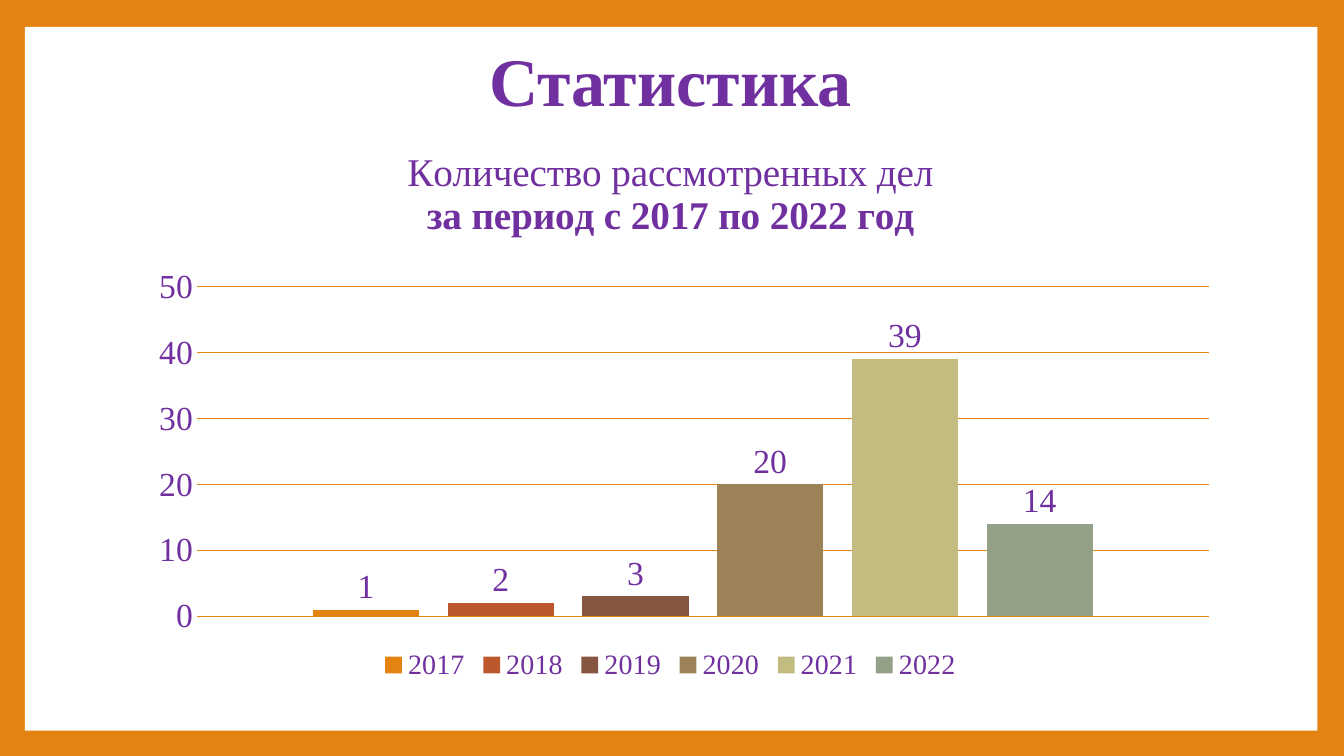
from lxml import etree
from pptx import Presentation
from pptx.chart.data import CategoryChartData
from pptx.dml.color import RGBColor
from pptx.enum import chart as charts, shapes, text
from pptx.oxml import ns
from pptx.util import Cm, Pt

HEADING = "Статистика"
CHART_TITLE = [("Количество рассмотренных дел", False),
               ("за период с 2017 по 2022 год", True)]
CASES = [("2017", 1, "E48312"), ("2018", 2, "BD582C"), ("2019", 3, "865640"),
         ("2020", 20, "9B8357"), ("2021", 39, "C2BC80"), ("2022", 14, "94A088")]

FONT, PURPLE, ORANGE, WHITE = "Times New Roman", "7030A0", "E48312", "FFFFFF"

# left, top, width, height in centimetres
PANEL_AREA = (0.63, 0.68, 32.57, 17.73)
HEADING_AREA = (3.18, 1.22, 27.43, 1.8)
CHART_AREA = (3.18, 3.28, 27.43, 14.02)
PLOT_AREA = (1.78, 3.95, 25.51, 8.3)  # measured inside the chart


def lengths(area):
    return [Cm(value) for value in area]


def paint(colour_format, colour):
    colour_format.rgb = RGBColor.from_string(colour)


def fill_solid(fill, colour):
    fill.solid()
    paint(fill.fore_color, colour)


def set_font(font, size, bold=False):
    font.name, font.size, font.bold = FONT, Pt(size), bold
    paint(font.color, PURPLE)


def place_plot(chart):
    """Fix the inner plot area as fractions of the chart's size."""
    plot_area = chart.element.find(".//" + ns.qn("c:plotArea"))
    for old in plot_area.findall(ns.qn("c:layout")):
        plot_area.remove(old)
    layout = etree.Element(ns.qn("c:layout"))
    plot_area.insert(0, layout)
    manual = etree.SubElement(layout, ns.qn("c:manualLayout"))
    width, height = CHART_AREA[2:]
    left, top, plot_width, plot_height = PLOT_AREA
    settings = [("layoutTarget", "inner"), ("xMode", "edge"), ("yMode", "edge"),
                ("x", left / width), ("y", top / height),
                ("w", plot_width / width), ("h", plot_height / height)]
    for tag, value in settings:
        etree.SubElement(manual, ns.qn("c:" + tag)).set("val", str(value))


def add_heading(page):
    box = page.shapes.add_textbox(*lengths(HEADING_AREA))
    frame = box.text_frame
    frame.word_wrap = True
    frame.vertical_anchor = text.MSO_ANCHOR.MIDDLE
    para = frame.paragraphs[0]
    para.text = HEADING
    para.alignment = text.PP_ALIGN.CENTER
    para.line_spacing = 0.9
    set_font(para.font, 48.6, bold=True)


def add_case_chart(page):
    data = CategoryChartData()
    data.categories = ["1"]
    for year, count, _ in CASES:
        data.add_series(year, [count])
    chart = page.shapes.add_chart(charts.XL_CHART_TYPE.COLUMN_CLUSTERED,
                                  *lengths(CHART_AREA), data).chart
    set_font(chart.font, 24)

    title = chart.chart_title
    title.include_in_layout = False
    frame = title.text_frame
    for index, (line, bold) in enumerate(CHART_TITLE):
        para = frame.add_paragraph() if index else frame.paragraphs[0]
        span = para.add_run()
        span.text = line
        set_font(span.font, 28, bold)

    chart.has_legend = True
    chart.legend.position = charts.XL_LEGEND_POSITION.BOTTOM
    chart.legend.include_in_layout = False
    set_font(chart.legend.font, 20)

    chart.category_axis.visible = False
    axis = chart.value_axis
    axis.minimum_scale, axis.maximum_scale, axis.major_unit = 0, 50, 10
    axis.major_tick_mark = charts.XL_TICK_MARK.NONE
    axis.format.line.fill.background()
    grid = axis.major_gridlines.format.line
    grid.width = Pt(0.75)
    paint(grid.color, ORANGE)
    set_font(axis.tick_labels.font, 24)

    plot = chart.plots[0]
    plot.gap_width, plot.overlap = 219, -27
    plot.vary_by_categories = False
    for series, (_, _, colour) in zip(plot.series, CASES):
        fill_solid(series.format.fill, colour)
        labels = series.data_labels
        labels.show_value = True
        labels.position = charts.XL_LABEL_POSITION.OUTSIDE_END
        set_font(labels.font, 24)
    place_plot(chart)


def main():
    deck = Presentation()
    deck.slide_width, deck.slide_height = Cm(33.87), Cm(19.05)
    page = deck.slides.add_slide(deck.slide_layouts[6])
    fill_solid(page.background.fill, ORANGE)
    panel = page.shapes.add_shape(shapes.MSO_SHAPE.RECTANGLE, *lengths(PANEL_AREA))
    panel.shadow.inherit = False
    fill_solid(panel.fill, WHITE)
    panel.line.fill.background()
    add_heading(page)
    add_case_chart(page)
    deck.save("out.pptx")


if __name__ == "__main__":
    main()
